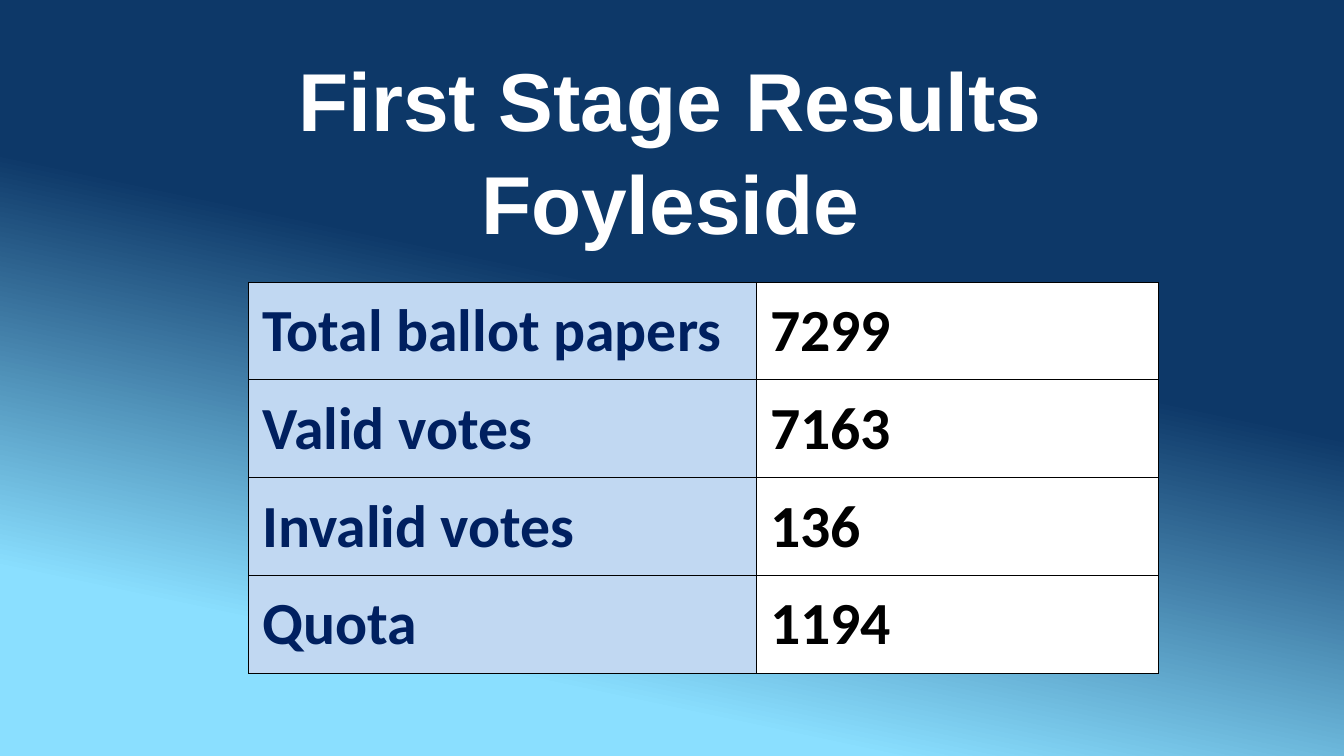
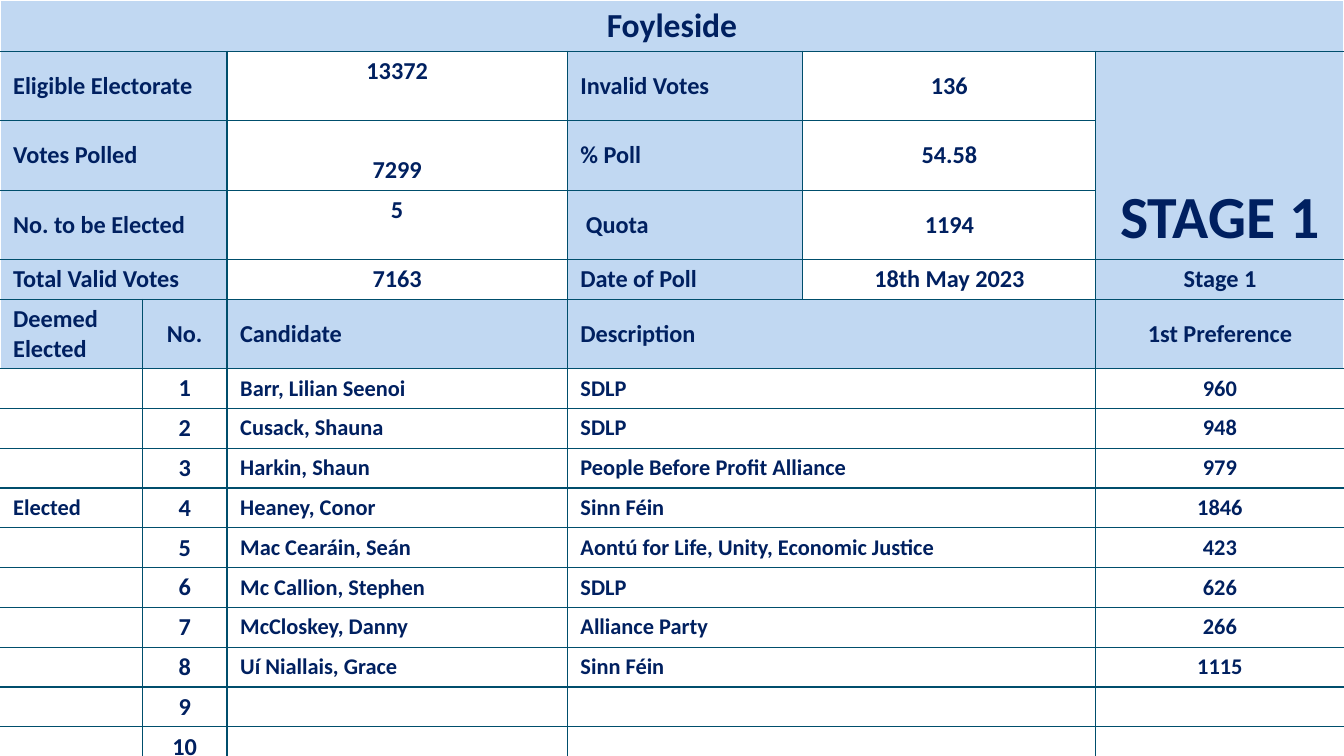
from lxml import etree
from pptx import Presentation
from pptx.dml.color import RGBColor
from pptx.enum.text import MSO_ANCHOR, PP_ALIGN
from pptx.oxml.ns import qn
from pptx.util import Cm, Pt

LEFT, CENTER = PP_ALIGN.LEFT, PP_ALIGN.CENTER
MIDDLE, BOTTOM = MSO_ANCHOR.MIDDLE, MSO_ANCHOR.BOTTOM

NAVY, PALE, WHITE, BLACK, TEAL = "002060", "C1D8F2", "FFFFFF", "000000", "004E6C"
GRADIENT = [(0.42, "0D3868"), (0.82, "8ADFFF")]
TITLE_FONT, TABLE_FONT = "Arial", "Calibri"

SUMMARY = [
    ("Total ballot papers", "7299"),
    ("Valid votes", "7163"),
    ("Invalid votes", "136"),
    ("Quota", "1194"),
]
FACTS = [
    ("Eligible Electorate", "13372", "Invalid Votes", "136"),
    ("Votes Polled", "7299", "% Poll", "54.58"),
    ("No. to be Elected", "5", " Quota", "1194"),
    ("Total Valid Votes", "7163", "Date of Poll", "18th May 2023"),
]
HEADINGS = ("Deemed Elected", "No.", "Candidate", "Description", "1st Preference")
CANDIDATES = [
    ("", "Barr, Lilian Seenoi", "SDLP", "960"),
    ("", "Cusack, Shauna", "SDLP", "948"),
    ("", "Harkin, Shaun", "People Before Profit Alliance", "979"),
    ("Elected", "Heaney, Conor", "Sinn Féin", "1846"),
    ("", "Mac Cearáin, Seán", "Aontú for Life, Unity, Economic Justice", "423"),
    ("", "Mc Callion, Stephen", "SDLP", "626"),
    ("", "McCloskey, Danny", "Alliance Party", "266"),
    ("", "Uí Niallais, Grace", "Sinn Féin", "1115"),
    ("", "", "", ""),
    ("", "", "", ""),
]
RESULT_COLUMNS = (2.69, 1.6, 6.43, 4.45, 5.54, 4.69)
LIST_COLUMNS = (0, 1, 2, 3, 5)
LIST_ALIGNS = (LEFT, CENTER, LEFT, LEFT, CENTER)
LOW_ROW, TALL_ROW, TITLE_ROW = 0.75, 1.31, 0.97
LIFT = 0.56


def rgb(value):
    """Turn a hex string into a colour."""
    return RGBColor.from_string(value)


def style_runs(para, font, size, color):
    """Make every run of a paragraph bold in one font, size and colour."""
    for span in para.runs:
        span.font.name = font
        span.font.size = Pt(size)
        span.font.bold = True
        span.font.color.rgb = rgb(color)


def set_borders(cell, **sides):
    """Draw the sides L, R, T and B of a cell, each given as (colour, points)."""
    properties = cell._tc.get_or_add_tcPr()
    for side in "LRTB":
        color, width = sides[side]
        line = etree.SubElement(properties, qn("a:ln" + side), w=str(Pt(width)))
        fill = etree.SubElement(line, qn("a:solidFill"))
        etree.SubElement(fill, qn("a:srgbClr"), val=color)


def fill_cell(cell, text, size, color, fill, align=LEFT, anchor=MIDDLE):
    """Write a cell's text and set its fill and alignment."""
    cell.fill.solid()
    cell.fill.fore_color.rgb = rgb(fill)
    cell.vertical_anchor = anchor
    cell.text_frame.text = text
    para = cell.text_frame.paragraphs[0]
    para.alignment = align
    style_runs(para, TABLE_FONT, size, color)
    if not text:
        etree.SubElement(para._p, qn("a:endParaRPr"), sz=str(size * 100))


def add_plain_table(page, left, top, widths, heights):
    """Add a table without banding, sized in centimetres."""
    frame = page.shapes.add_table(len(heights), len(widths), Cm(left), Cm(top),
                                  Cm(sum(widths)), Cm(sum(heights)))
    table = frame.table
    table.first_row = table.horz_banding = False
    for column, width in zip(table.columns, widths):
        column.width = Cm(width)
    for row, height in zip(table.rows, heights):
        row.height = Cm(height)
    return table


def add_title(page, left, top, width, height, lines):
    """Add the centred slide title, resting on the bottom of its box."""
    box = page.shapes.add_textbox(Cm(left), Cm(top), Cm(width), Cm(height))
    frame = box.text_frame
    frame.word_wrap = True
    frame.vertical_anchor = BOTTOM
    frame.margin_left = frame.margin_top = frame.margin_bottom = 0
    frame.margin_right = Cm(0.05)
    frame.text = "\n".join(lines)
    for index, para in enumerate(frame.paragraphs):
        para.alignment = CENTER
        if index:
            para.space_before = Pt(2.5)
        style_runs(para, TITLE_FONT, 44, WHITE)


def add_summary(page, left, top):
    """Add the table of ballot totals."""
    table = add_plain_table(page, left, top, (9.6, 7.6), [1.85] * len(SUMMARY))
    rule = (BLACK, 0.5)
    for row, (label, value) in enumerate(SUMMARY):
        for column, (text, color, fill) in enumerate([(label, NAVY, PALE), (value, BLACK, WHITE)]):
            cell = table.cell(row, column)
            set_borders(cell, L=rule, R=rule, T=rule, B=rule)
            fill_cell(cell, text, 32, color, fill)


def prepare_grid(table):
    """Merge the result cells and give every cell its borders and margins."""
    last = len(RESULT_COLUMNS) - 1
    table.cell(0, 0).merge(table.cell(0, last))
    for row in range(1, len(FACTS) + 1):
        table.cell(row, 0).merge(table.cell(row, 1))
    table.cell(1, last).merge(table.cell(3, last))
    for row in range(len(FACTS) + 1, len(table.rows)):
        table.cell(row, 3).merge(table.cell(row, 4))
    edge, rule = (WHITE, 1), (TEAL, 0.75)
    for row in range(len(table.rows)):
        for column in range(last + 1):
            cell = table.cell(row, column)
            at_right = column == last or row == 0
            set_borders(cell, L=rule if column else edge, R=edge if at_right else rule,
                        T=rule if row else edge, B=rule)
            cell.margin_left = cell.margin_right = Cm(0.25)
            cell.margin_top = cell.margin_bottom = Cm(0.1)


def add_results(page, left, top):
    """Add the full result sheet with facts above and candidates below."""
    heights = ([TITLE_ROW] + [TALL_ROW] * 3 + [LOW_ROW, TALL_ROW]
               + [LOW_ROW] * len(CANDIDATES))
    table = add_plain_table(page, left, top, RESULT_COLUMNS, heights)
    prepare_grid(table)
    fill_cell(table.cell(0, 0), "Foyleside", 18, NAVY, PALE, CENTER)
    for row, facts in enumerate(FACTS, 1):
        for index, (column, text) in enumerate(zip((0, 2, 3, 4), facts)):
            is_value = index % 2
            fill_cell(table.cell(row, column), text, 13, NAVY,
                      WHITE if is_value else PALE, CENTER if is_value else LEFT)
    table.cell(1, 2).margin_bottom = table.cell(3, 2).margin_bottom = Cm(0.1 + LIFT)
    table.cell(2, 2).margin_top = Cm(0.1 + LIFT)
    fill_cell(table.cell(1, 5), "STAGE 1", 32, NAVY, PALE, CENTER, BOTTOM)
    fill_cell(table.cell(4, 5), "Stage 1", 13, NAVY, PALE, CENTER)

    heading_row = len(FACTS) + 1
    for column, text, align in zip(LIST_COLUMNS, HEADINGS, LIST_ALIGNS):
        fill_cell(table.cell(heading_row, column), text, 13, NAVY, PALE, align)
    for number, (elected, *details) in enumerate(CANDIDATES, 1):
        texts = (elected, str(number), *details)
        for column, text, align in zip(LIST_COLUMNS, texts, LIST_ALIGNS):
            fill_cell(table.cell(heading_row + number, column), text,
                      13 if column == 1 else 12, NAVY, WHITE, align)


def set_background(master):
    """Give all slides the blue gradient."""
    fill = master.background.fill
    fill.gradient()
    fill.gradient_angle = 360 - 102
    for stop, (position, color) in zip(fill.gradient_stops, GRADIENT):
        stop.position = position
        stop.color.rgb = rgb(color)


def main():
    """Build the two slides and save them."""
    deck = Presentation()
    deck.slide_width, deck.slide_height = Cm(25.4), Cm(14.29)
    set_background(deck.slide_master)
    blank = deck.slide_layouts[6]

    page = deck.slides.add_slide(blank)
    add_title(page, 0, 0.94, 25.4, 3.81, ("First Stage Results", "Foyleside"))
    add_summary(page, 4.7, 5.33)

    page = deck.slides.add_slide(blank)
    add_results(page, 0, 0)
    deck.save("out.pptx")


if __name__ == "__main__":
    main()
